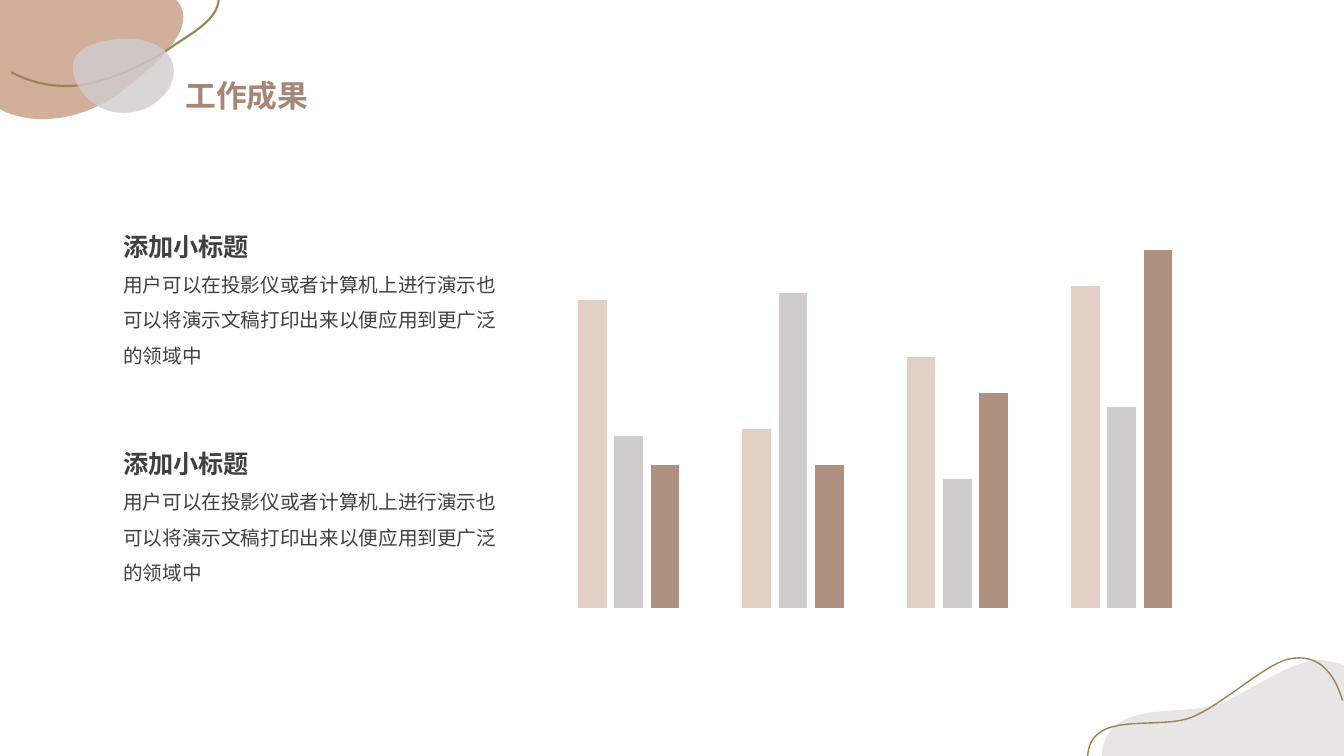
import math
from lxml import etree
from pptx import Presentation
from pptx.chart import data
from pptx.dml import color
from pptx.enum import chart as charts, text
from pptx.oxml import ns
from pptx.util import Pt

FONT = "Noto Sans CJK SC"
HUES = {"tan": "D1AE9A", "gold": "9B8357", "gray": "D0CCCD", "title": "A78677",
        "ink": "404040", "black": "000000", "rose": "E2CFC5", "brown": "AD9080"}

TITLE = "工作成果"
HEAD = "添加小标题"
BODY = "用户可以在投影仪或者计算机上进行演示也可以将演示文稿打印出来以便应用到更广泛的领域中"
NOTES = [(HEAD, BODY), (HEAD, BODY)]

CATS = ["1", "2", "3", "4"]
SERIES = [("Series 1", "rose", (86, 50, 70, 90)),
          ("Series 2", "gray", (48, 88, 36, 56)),
          ("Series 3", "brown", (40, 40, 60, 100))]
PLOT = {"x": 0.022, "y": 0.003, "w": 0.955, "h": 0.962}

BLOBS = [
    ("tan", 98, (0, -0.7, 130.3, 86.1), 180, (33.8, 85), [
        (52.6, 84.3, 72, 77, 89.3, 63.4), (116.6, 41.8, 141.1, 18.7, 126.7, 0.7),
        (125.3, -0.7), (0, -0.7), (0, 77.8), (3.6, 79.9),
        (13, 83.5, 23, 85.7, 33.8, 85)]),
    ("gray", 80, (51.8, 27.5, 72, 53.3), 180, (53.3, 41.8), [
        (47.5, 55.1, 62.6, 81.4, 89.3, 80.6),
        (115.2, 79.9, 133.9, 54, 118.8, 37.4),
        (103, 20.2, 58.3, 28.1, 53.3, 41.8)]),
    ("gray", 50, (787, 471.6, 173, 68.4), 0, (940.3, 471.6), [
        (941.8, 471.6, 942.5, 471.6, 943.9, 471.6),
        (949, 472.3, 954.4, 473, 960, 475.2), (960, 540), (787, 540),
        (789, 496.8, 848.2, 513.4, 873.4, 501.8),
        (897.8, 490.3, 921.6, 473, 940.3, 471.6)]),
]
WAVES = [
    (1.5, (10.1, -20.2, 144, 84.2), 184.6, (8, 51.6), [
        (19.4, 57.5, 32.2, 61.2, 45.4, 61.4), (69, 62.5, 103.7, 46.8, 121, 34.6),
        (139, 21.8, 167.8, 9, 151.2, -14.4)]),
    (1, (776.9, 469.7, 181.8, 72.2), 0, (776.9, 542.2), [
        (776.9, 504.7, 829.4, 523.4, 853.9, 511.2),
        (878.4, 499.7, 906.5, 471.6, 923.8, 470.2),
        (941, 468, 952.6, 478.8, 959, 500.4)]),
]


def rgb(name):
    return color.RGBColor.from_string(HUES[name])


def outline(slide, box, turn, start, parts, close):
    left, top, wide, high = box
    pen = slide.shapes.build_freeform(Pt(start[0]), Pt(start[1]))
    pen.add_line_segments([(Pt(p[-2]), Pt(p[-1])) for p in parts], close=close)
    shape = pen.convert_to_shape()
    shape.shadow.inherit = False
    shape.left, shape.top, shape.width, shape.height = map(Pt, box)
    shape.rotation = turn
    track = next(shape.element.iter(ns.qn("a:path")))
    for old in list(track):
        track.remove(old)
    track.set("w", str(Pt(wide)))
    track.set("h", str(Pt(high)))
    cos, sin = math.cos(math.radians(turn)), math.sin(math.radians(turn))
    for i, part in enumerate([start, *parts]):
        tag = "moveTo" if i == 0 else "lnTo" if len(part) == 2 else "cubicBezTo"
        node = etree.SubElement(track, ns.qn("a:" + tag))
        for x, y in zip(part[::2], part[1::2]):
            dx, dy = x - left - wide / 2, y - top - high / 2
            etree.SubElement(node, ns.qn("a:pt"),
                             x=str(Pt(wide / 2 + dx * cos + dy * sin)),
                             y=str(Pt(high / 2 + dy * cos - dx * sin)))
    if close:
        etree.SubElement(track, ns.qn("a:close"))
    return shape


def add_blob(slide, hue, alpha, *form):
    blob = outline(slide, *form, True)
    blob.line.fill.background()
    blob.fill.solid()
    blob.fill.fore_color.rgb = rgb(hue)
    tint = next(blob.element.iter(ns.qn("a:srgbClr")))
    etree.SubElement(tint, ns.qn("a:alpha"), val=str(alpha * 1000))


def add_wave(slide, width, *form):
    wave = outline(slide, *form, False)
    wave.fill.background()
    wave.line.color.rgb = rgb("gold")
    wave.line.width = Pt(width)


def add_text(slide, box, lines, gap, anchor):
    frame = slide.shapes.add_textbox(*map(Pt, box)).text_frame
    frame.margin_left = frame.margin_top = frame.margin_right = frame.margin_bottom = 0
    frame.word_wrap = True
    frame.auto_size = text.MSO_AUTO_SIZE.SHAPE_TO_FIT_TEXT
    frame.vertical_anchor = anchor
    frame.text = "\n".join(line[0] for line in lines)
    for para, (_, size, bold, hue) in zip(frame.paragraphs, lines):
        para.line_spacing = gap
        font = para.runs[0].font
        font.size, font.bold, font.name = Pt(size), bold, FONT
        font.color.rgb = rgb(hue)
        etree.SubElement(font._element, ns.qn("a:ea"), typeface=FONT)


def add_bars(slide):
    table = data.CategoryChartData()
    table.categories = CATS
    for name, _, vals in SERIES:
        table.add_series(name, vals)
    chart = slide.shapes.add_chart(charts.XL_CHART_TYPE.COLUMN_CLUSTERED,
                                   Pt(379.5), Pt(126.3), Pt(491.8), Pt(319.2), table).chart
    chart.has_legend = chart.has_title = False
    chart.font.name, chart.font.size = FONT, Pt(10)
    chart.font.color.rgb = rgb("black")
    axis = chart.value_axis
    axis.minimum_scale, axis.maximum_scale = 0, 120
    axis.has_major_gridlines = False
    axis.visible = chart.category_axis.visible = False
    plot = chart.plots[0]
    plot.gap_width, plot.overlap, plot.vary_by_categories = 219, -27, False
    for bars, (_, hue, _) in zip(plot.series, SERIES):
        bars.format.fill.solid()
        bars.format.fill.fore_color.rgb = rgb(hue)
    area = next(chart.element.iter(ns.qn("c:plotArea")))
    for old in area.findall(ns.qn("c:layout")):
        area.remove(old)
    layout = etree.Element(ns.qn("c:layout"))
    area.insert(0, layout)
    manual = etree.SubElement(layout, ns.qn("c:manualLayout"))
    rules = [("layoutTarget", "inner"), ("xMode", "edge"), ("yMode", "edge"), *PLOT.items()]
    for tag, val in rules:
        etree.SubElement(manual, ns.qn("c:" + tag), val=str(val))


def main():
    deck = Presentation()
    deck.slide_width, deck.slide_height = Pt(960), Pt(540)
    slide = deck.slides.add_slide(deck.slide_layouts[6])
    add_blob(slide, *BLOBS[0])
    add_wave(slide, *WAVES[0])
    for blob in BLOBS[1:]:
        add_blob(slide, *blob)
    add_wave(slide, *WAVES[1])
    add_text(slide, (132.5, 49.7, 162, 31.7), [(TITLE, 22, True, "title")],
             1.2, text.MSO_ANCHOR.TOP)
    for row, (head, body) in enumerate(NOTES):
        add_text(slide, (88, 153.9 + 155.2 * row, 269.3, 108.7),
                 [(head, 18, True, "ink"), (body, 14, False, "ink")],
                 1.5, text.MSO_ANCHOR.MIDDLE)
    add_bars(slide)
    deck.save("out.pptx")


if __name__ == "__main__":
    main()
